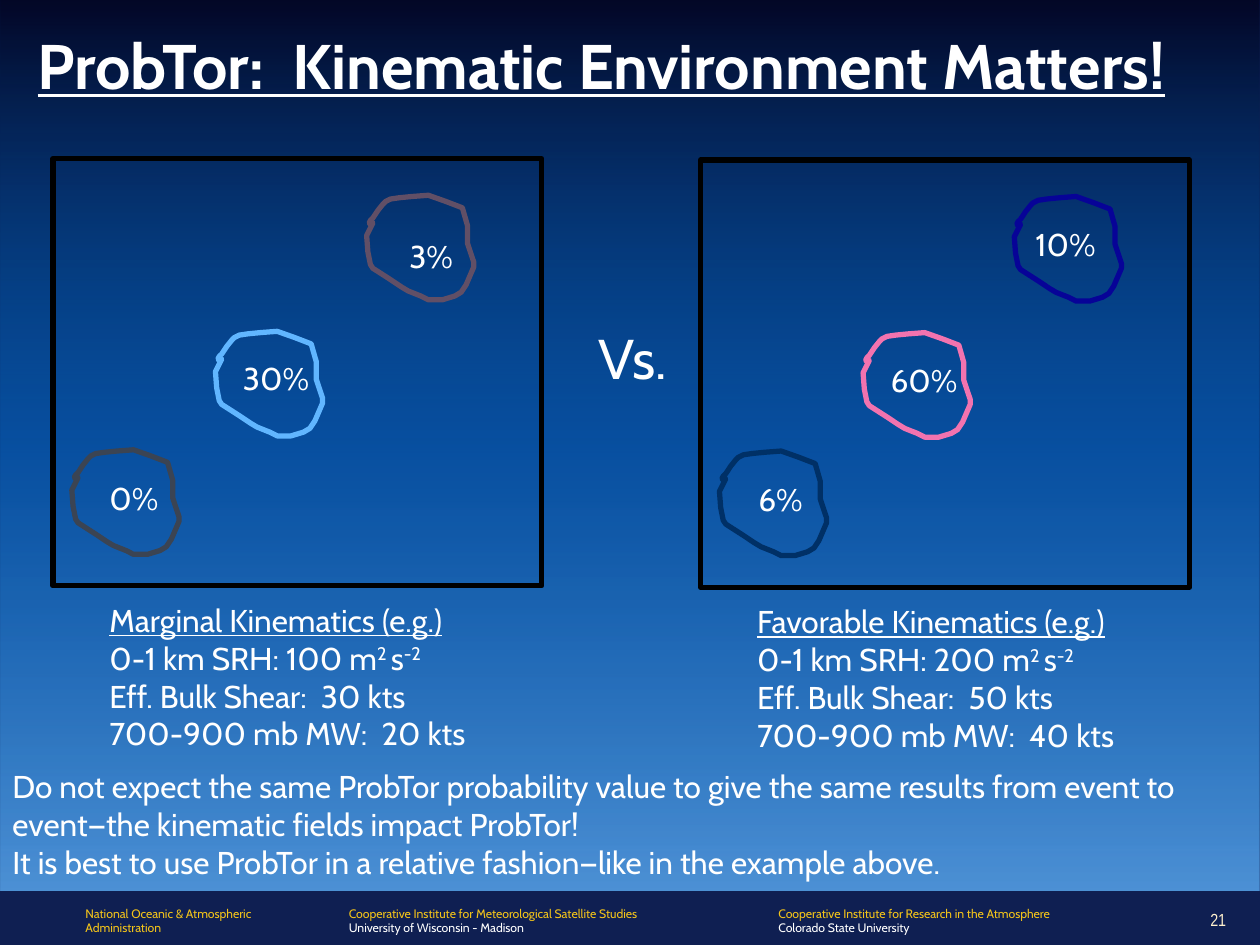
from lxml import etree
from pptx import Presentation
from pptx.dml.color import RGBColor
from pptx.enum.shapes import MSO_SHAPE
from pptx.enum.text import MSO_ANCHOR, MSO_AUTO_SIZE, PP_ALIGN
from pptx.oxml.ns import qn
from pptx.util import Inches, Pt

WHITE, GOLD = "FFFFFF", "F2C31A"
FOOTER_FONT = {"size": 7, "color": GOLD}

# Storm cell outline, in inches from its top left corner
CELL = [
    (0.49, 0), (0.36, 0.01), (0.26, 0.02), (0.19, 0.03), (0.15, 0.05),
    (0.13, 0.07), (0.09, 0.12), (0.05, 0.18), (0.03, 0.2), (0.02, 0.22),
    (0.03, 0.23), (0.05, 0.22), (0, 0.32), (0.01, 0.45), (0.03, 0.55),
    (0.05, 0.58), (0.19, 0.67), (0.28, 0.73), (0.33, 0.76), (0.38, 0.78),
    (0.43, 0.8), (0.49, 0.83), (0.6, 0.83), (0.7, 0.8), (0.75, 0.77),
    (0.79, 0.71), (0.85, 0.57), (0.85, 0.53), (0.82, 0.44), (0.8, 0.38),
    (0.8, 0.24), (0.76, 0.1), (0.63, 0.05),
]


def rgb(color):
    return RGBColor.from_string(color)


def add_text(slide, x, y, w, h, paragraphs, size=18, color=WHITE, font="Cabin",
             bold=False, underline=False, align=PP_ALIGN.LEFT,
             anchor=MSO_ANCHOR.TOP, grow=True):
    """Each paragraph is a list of (text, overrides) runs."""
    tf = slide.shapes.add_textbox(Inches(x), Inches(y), Inches(w), Inches(h)).text_frame
    tf.word_wrap = True
    tf.vertical_anchor = anchor
    if grow:
        tf.auto_size = MSO_AUTO_SIZE.SHAPE_TO_FIT_TEXT
    for i, runs in enumerate(paragraphs):
        p = tf.add_paragraph() if i else tf.paragraphs[0]
        p.alignment = align
        for text, style in runs:
            r = p.add_run()
            r.text = text
            r.font.name = font
            r.font.size = Pt(size)
            r.font.bold = bold
            r.font.underline = style.get("underline", underline)
            r.font.color.rgb = rgb(style.get("color", color))
            if style.get("superscript"):
                r.font._element.set("baseline", "30000")


def add_sky(slide, x, y, w, h):
    sp = slide.shapes.add_shape(MSO_SHAPE.RECTANGLE, Inches(x), Inches(y), Inches(w), Inches(h))
    sp.shadow.inherit = False
    sp.line.fill.background()
    sp.fill.gradient()
    sp.fill.gradient_angle = 270
    stops = sp._element.spPr.find(qn("a:gradFill")).find(qn("a:gsLst"))
    for stop in list(stops):
        stops.remove(stop)
    for pos, color, alpha in [(0, "01021E", 85), (50, "007EEB", 50), (100, "61B6FF", 75)]:
        stop = etree.SubElement(stops, qn("a:gs"), pos=str(pos * 1000))
        clr = etree.SubElement(stop, qn("a:srgbClr"), val=color)
        etree.SubElement(clr, qn("a:alpha"), val=str(alpha * 1000))


def outline(sp, color):
    sp.shadow.inherit = False
    sp.fill.background()
    sp.line.color.rgb = rgb(color)
    sp.line.width = Pt(3)


def add_cell(slide, x, y, color):
    points = [(Inches(x + dx), Inches(y + dy)) for dx, dy in CELL]
    fb = slide.shapes.build_freeform(*points[0])
    fb.add_line_segments(points[1:], close=True)
    outline(fb.convert_to_shape(), color)


def add_panel(slide, x, y, cells, heading, srh, shear, wind):
    """Cells are (color, label, label x, label y, label width), lower left first."""
    frame = slide.shapes.add_shape(MSO_SHAPE.RECTANGLE, Inches(x), Inches(y),
                                   Inches(3.88), Inches(3.39))
    outline(frame, "000000")
    places = [(0.15, 2.31), (1.29, 1.37), (2.49, 0.29)]
    for (dx, dy), (color, *_) in zip(places, cells):
        add_cell(slide, x + dx, y + dy, color)
    for _, label, dx, dy, w in cells:
        add_text(slide, x + dx, y + dy, w, 0.4, [[(label, {})]])
    sup = {"superscript": True}
    add_text(slide, x + 0.35, y + 3.46, 3.11, 1.31, [
        [(f"{heading} Kinematics (e.g.)", {"underline": True})],
        [(f"0-1 km SRH: {srh} m", {}), ("2 ", sup), ("s", {}), ("-2", sup)],
        [(f"Eff. Bulk Shear:  {shear} kts", {})],
        [(f"700-900 mb MW:  {wind} kts", {})],
    ])


def add_footer(slide, y):
    columns = [
        (2.67, 2.92, "Cooperative Institute for Meteorological Satellite Studies",
         "University of Wisconsin - Madison", WHITE),
        (0.58, 1.58, "National Oceanic & Atmospheric", "Administration", GOLD),
        (6.08, 2.92, "Cooperative Institute for Research in the Atmosphere",
         "Colorado State University", WHITE),
    ]
    for x, w, first, second, color in columns:
        add_text(slide, x, y, w, 0.34,
                 [[(first, {})], [(second, {"color": color})]], **FOOTER_FONT)
    add_text(slide, 9.33, y + 0.03, 0.5, 0.25, [[("21", {})]], size=10,
             color="FFF1CE", font="Arial Narrow", align=PP_ALIGN.RIGHT,
             anchor=MSO_ANCHOR.MIDDLE, grow=False)


def main():
    prs = Presentation()
    prs.slide_width, prs.slide_height = Inches(10), Inches(7.5)
    slide = prs.slides.add_slide(prs.slide_layouts[6])
    slide.background.fill.solid()
    slide.background.fill.fore_color.rgb = rgb("0F1F52")

    add_sky(slide, 0, -0.02, 10, 7.09)
    add_footer(slide, 7.14)
    add_text(slide, 0.2, 0.16, 9.63, 0.71,
             [[("ProbTor:  Kinematic Environment Matters!", {})]],
             size=36, bold=True, underline=True)
    add_panel(slide, 0.42, 1.26, [
        ("3B4453", "0%", 0.35, 2.49, 0.6),
        ("61B6FF", "30%", 1.41, 1.54, 0.73),
        ("614F66", "3%", 2.73, 0.57, 0.6),
    ], "Marginal", 100, 30, 20)
    add_text(slide, 4.65, 2.52, 0.76, 0.64, [[("Vs.", {})]], size=32)
    add_panel(slide, 5.56, 1.27, [
        ("003066", "6%", 0.36, 2.49, 0.6),
        ("F273AF", "60%", 1.41, 1.55, 0.73),
        ("070397", "10%", 2.56, 0.47, 0.84),
    ], "Favorable", 200, 50, 40)
    add_text(slide, 0, 6.04, 9.83, 1.01, [
        [("Do not expect the same ProbTor probability value to give the same results "
          "from event to event—the kinematic fields impact ProbTor!", {})],
        [("It is best to use ProbTor in a relative fashion—like in the example above.", {})],
    ])
    prs.save("out.pptx")


if __name__ == "__main__":
    main()
